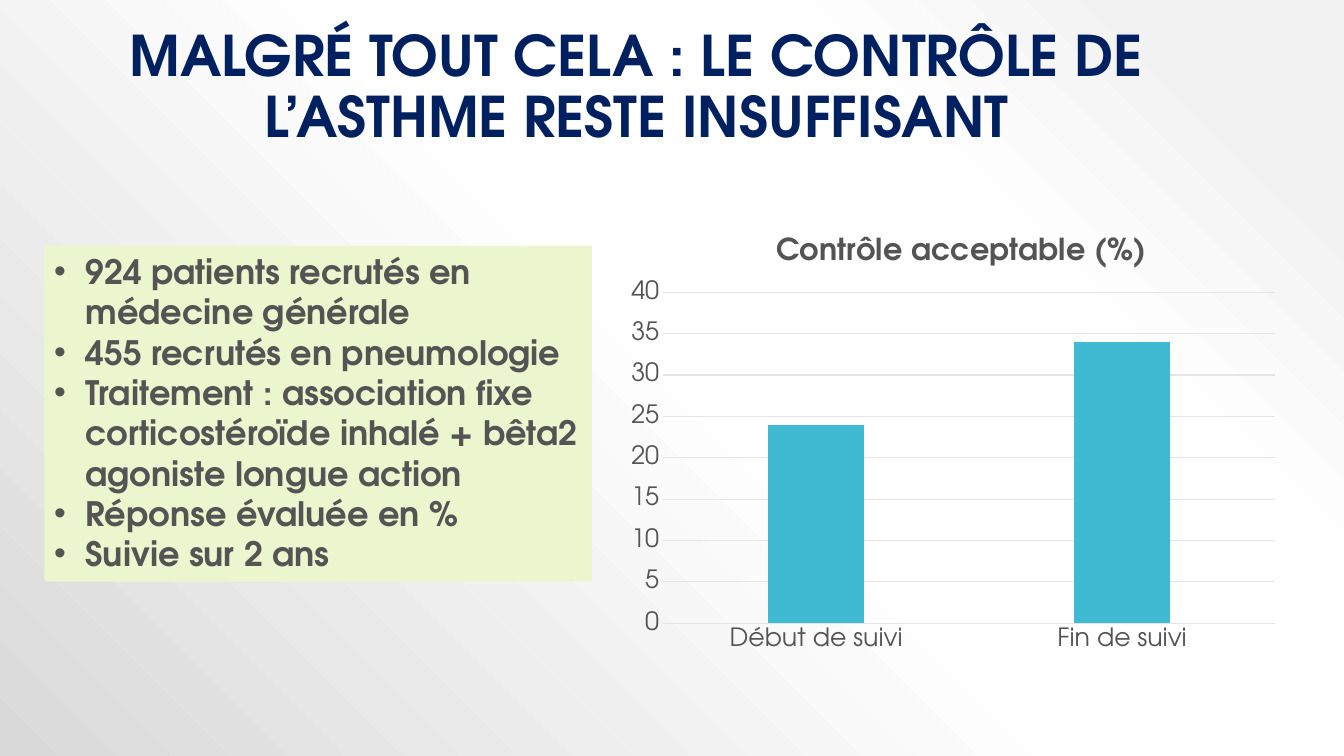
from dataclasses import dataclass
from typing import Any, NamedTuple

from lxml.etree import SubElement
from pptx import Presentation
from pptx.chart.data import CategoryChartData
from pptx.dml.color import RGBColor
from pptx.enum.chart import XL_CHART_TYPE, XL_TICK_MARK
from pptx.enum.shapes import MSO_SHAPE
from pptx.enum.text import MSO_ANCHOR, PP_ALIGN
from pptx.oxml import parse_xml
from pptx.oxml.ns import nsdecls, qn
from pptx.util import Inches, Pt


@dataclass(frozen=True)
class Theme:
    font: str = "TeX Gyre Adventor"
    navy: str = "002060"
    grey: str = "545454"
    pale_green: str = "EBF6CE"
    bar: str = "40BAD2"
    rule: str = "E5E5E5"
    backdrop: tuple = ((10, "F2F2F2"), (28, "FFFFFF"), (48, "FFFFFF"), (100, "D9D9D9"))
    title_size: float = 40
    body_size: float = 24
    chart_title_size: float = 21.6
    axis_size: float = 18
    rule_width: float = 0.75


class Area(NamedTuple):
    left: float
    top: float
    width: float
    height: float

    def lengths(self) -> tuple[int, int, int, int]:
        across, down = WIDTH / 100, HEIGHT / 100
        return (round(self.left * across), round(self.top * down),
                round(self.width * across), round(self.height * down))


class Measure(NamedTuple):
    moment: str
    percent: int


THEME = Theme()
WIDTH, HEIGHT = Inches(13.33), Inches(7.5)
HEADING_AREA = Area(4.58, 1.73, 85.52, 18.67)
STUDY_AREA = Area(3.3, 32.53, 40.74, 44.4)
CHART_AREA = Area(45.84, 28, 50.04, 59.2)
PLOT_LAYOUT = {"x": 0.07, "y": 0.18, "w": 0.91, "h": 0.74}
CHART_TITLE_LAYOUT = {"x": 0.23, "y": 0.04}

HEADING = "MALGRÉ TOUT CELA : LE CONTRÔLE DE L’ASTHME RESTE INSUFFISANT"
STUDY_POINTS = (
    "924 patients recrutés en médecine générale",
    "455 recrutés en pneumologie",
    "Traitement : association fixe corticostéroïde inhalé + bêta2 agoniste longue action",
    "Réponse évaluée en %",
    "Suivie sur 2 ans",
)
CONTROL = (Measure("Début de suivi", 24), Measure("Fin de suivi", 34))


def rgb(code: str) -> RGBColor:
    return RGBColor.from_string(code)


def style_font(font: Any, size: float, color: str, bold: bool = False) -> None:
    font.name, font.size, font.bold = THEME.font, Pt(size), bold
    font.color.rgb = rgb(color)


def write(frame: Any, *lines: str, size: float, color: str, bold: bool = True,
          align: PP_ALIGN = PP_ALIGN.LEFT, anchor: MSO_ANCHOR = MSO_ANCHOR.MIDDLE,
          spacing: float = 1.0, bullet: str = "") -> None:
    frame.word_wrap = True
    frame.vertical_anchor = anchor
    for index, line in enumerate(lines):
        paragraph = frame.add_paragraph() if index else frame.paragraphs[0]
        paragraph.alignment, paragraph.line_spacing = align, spacing
        run = paragraph.add_run()
        run.text = line
        style_font(run.font, size, color, bold)
        if bullet:
            properties = paragraph._p.get_or_add_pPr()
            indent = Inches(0.31)
            properties.set("marL", str(indent))
            properties.set("indent", str(-indent))
            SubElement(properties, qn("a:buFont"), typeface="Arial")
            SubElement(properties, qn("a:buChar"), char=bullet)


def paint_backdrop(slide: Any) -> None:
    slide.background.fill.solid()
    backdrop = slide.element.find(".//" + qn("p:bgPr"))
    stops = "".join(f'<a:gs pos="{share * 1000}"><a:srgbClr val="{color}"/></a:gs>'
                    for share, color in THEME.backdrop)
    backdrop.replace(backdrop[0], parse_xml(
        f'<a:gradFill {nsdecls("a")} rotWithShape="1"><a:gsLst>{stops}</a:gsLst>'
        '<a:path path="circle"><a:fillToRect l="100000" b="100000"/></a:path></a:gradFill>'))


def add_heading(slide: Any) -> None:
    heading = slide.shapes.add_textbox(*HEADING_AREA.lengths())
    write(heading.text_frame, HEADING, size=THEME.title_size, color=THEME.navy,
          align=PP_ALIGN.CENTER, anchor=MSO_ANCHOR.BOTTOM, spacing=0.9)


def add_study(slide: Any) -> None:
    study = slide.shapes.add_shape(MSO_SHAPE.RECTANGLE, *STUDY_AREA.lengths())
    study.shadow.inherit = False
    study.fill.solid()
    study.fill.fore_color.rgb = rgb(THEME.pale_green)
    study.line.fill.background()
    write(study.text_frame, *STUDY_POINTS, size=THEME.body_size, color=THEME.grey,
          anchor=MSO_ANCHOR.TOP, bullet="•")


def place(part: Any, layout: dict[str, float], inner: bool = False) -> None:
    for previous in part.findall(qn("c:layout")):
        part.remove(previous)
    holder = parse_xml(f'<c:layout {nsdecls("c")}/>')
    manual = SubElement(holder, qn("c:manualLayout"))
    if inner:
        SubElement(manual, qn("c:layoutTarget"), val="inner")
    for key in ("x", "y"):
        SubElement(manual, qn(f"c:{key}Mode"), val="edge")
    for key, share in layout.items():
        SubElement(manual, qn(f"c:{key}"), val=str(share))
    part.insert(0 if inner else 1, holder)


def style_rule(line: Any) -> None:
    line.color.rgb = rgb(THEME.rule)
    line.width = Pt(THEME.rule_width)


def add_control_chart(slide: Any) -> None:
    control = CategoryChartData()
    control.categories = [measure.moment for measure in CONTROL]
    control.add_series("Series 1", [measure.percent for measure in CONTROL])
    chart = slide.shapes.add_chart(
        XL_CHART_TYPE.COLUMN_CLUSTERED, *CHART_AREA.lengths(), control).chart
    style_font(chart.font, THEME.axis_size, THEME.grey)
    chart.has_legend = False
    chart.has_title = True
    write(chart.chart_title.text_frame, "Contrôle acceptable (%)",
          size=THEME.chart_title_size, color=THEME.grey, align=PP_ALIGN.CENTER)
    chart.chart_title.include_in_layout = False

    columns = chart.plots[0]
    columns.gap_width, columns.overlap = 219, -27
    columns.vary_by_categories = False
    bars = columns.series[0].format.fill
    bars.solid()
    bars.fore_color.rgb = rgb(THEME.bar)

    moments, percents = chart.category_axis, chart.value_axis
    for axis in (moments, percents):
        axis.major_tick_mark = axis.minor_tick_mark = XL_TICK_MARK.NONE
        style_font(axis.tick_labels.font, THEME.axis_size, THEME.grey)
    style_rule(moments.format.line)
    percents.format.line.fill.background()
    percents.minimum_scale, percents.maximum_scale, percents.major_unit = 0, 40, 5
    percents.has_major_gridlines = True
    style_rule(percents.major_gridlines.format.line)

    chart_space = chart.element
    place(chart_space.find(".//" + qn("c:plotArea")), PLOT_LAYOUT, inner=True)
    place(chart_space.find(".//" + qn("c:title")), CHART_TITLE_LAYOUT)


def main() -> None:
    presentation = Presentation()
    presentation.slide_width, presentation.slide_height = WIDTH, HEIGHT
    slide = presentation.slides.add_slide(presentation.slide_layouts[6])
    paint_backdrop(slide)
    add_heading(slide)
    add_study(slide)
    add_control_chart(slide)
    presentation.save("out.pptx")


if __name__ == "__main__":
    main()
